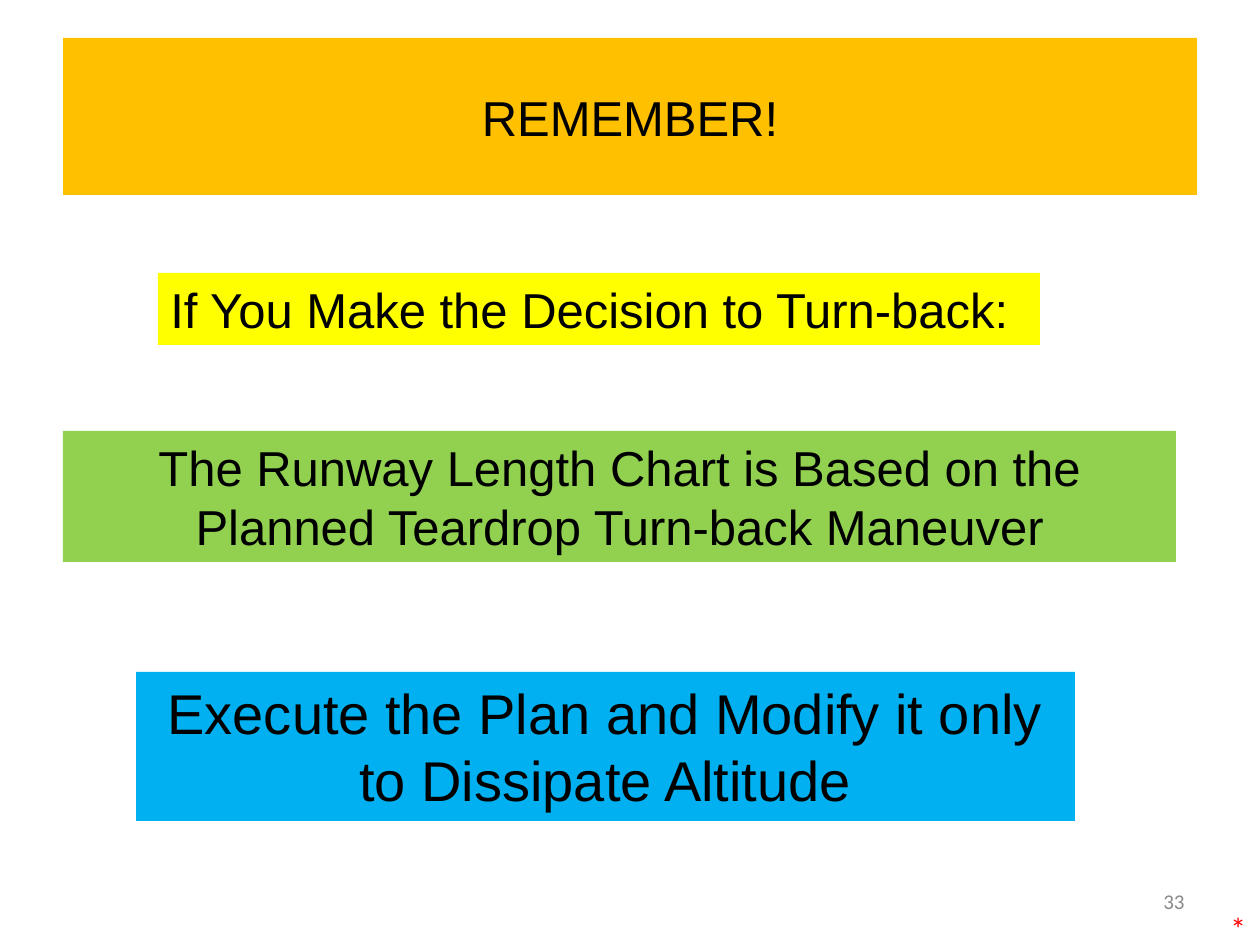
"""Build the REMEMBER! slide about the turn-back decision."""
from pptx import Presentation
from pptx.dml.color import RGBColor
from pptx.enum.text import MSO_ANCHOR, MSO_AUTO_SIZE, PP_ALIGN
from pptx.util import Emu, Pt

PX = 914400 // 126
COLORS = {
    "orange": "FFC000", "blue": "00B0F0", "green": "92D050", "yellow": "FFFF00",
    "black": "000000", "gray": "898989", "red": "FF0000",
}


def place(sp, box, fill=None):
    sp.left, sp.top, sp.width, sp.height = [Emu(v * PX) for v in box]
    if fill:
        sp.fill.solid()
        sp.fill.fore_color.rgb = RGBColor.from_string(COLORS[fill])


def write(tf, lines, size, color, align, font):
    for i, line in enumerate(lines):
        p = tf.add_paragraph() if i else tf.paragraphs[0]
        p.alignment = align
        r = p.add_run()
        r.text = line
        r.font.size = Pt(size)
        r.font.name = font
        r.font.color.rgb = RGBColor.from_string(COLORS[color])


prs = Presentation()
prs.slide_width, prs.slide_height = Emu(1260 * PX), Emu(945 * PX)
s = prs.slides.add_slide(prs.slide_layouts[5])

title = s.shapes.title
place(title, (63, 38, 1134, 157), "orange")
title.text_frame.vertical_anchor = MSO_ANCHOR.MIDDLE
write(title.text_frame, ["REMEMBER!"], 28, "black", PP_ALIGN.CENTER, "Arial")

number = s.shapes.add_textbox(0, 0, 0, 0)
place(number, (903, 876, 294, 50))
number.text_frame.word_wrap = True
number.text_frame.vertical_anchor = MSO_ANCHOR.MIDDLE
write(number.text_frame, ["33"], 12, "gray", PP_ALIGN.RIGHT, "Calibri")

notes = [
    ((136, 672, 939, 149), "blue", 32, "black", PP_ALIGN.CENTER, "Arial", False,
     [" Execute the Plan and Modify it only ", "to Dissipate Altitude"]),
    ((63, 431, 1113, 131), "green", 28, "black", PP_ALIGN.CENTER, "Arial", True,
     ["The Runway Length Chart is Based on the Planned Teardrop Turn-back Maneuver"]),
    ((158, 273, 882, 72), "yellow", 28, "black", PP_ALIGN.LEFT, "Arial", True,
     ["If You Make the Decision to Turn-back:"]),
    ((1218, 903, 42, 50), None, 18, "red", PP_ALIGN.LEFT, "Calibri", False, ["*"]),
]
for box, fill, size, color, align, font, wrap, lines in notes:
    sp = s.shapes.add_textbox(0, 0, 0, 0)
    place(sp, box, fill)
    tf = sp.text_frame
    tf.word_wrap = wrap
    tf.auto_size = MSO_AUTO_SIZE.SHAPE_TO_FIT_TEXT
    write(tf, lines, size, color, align, font)

prs.save("out.pptx")
